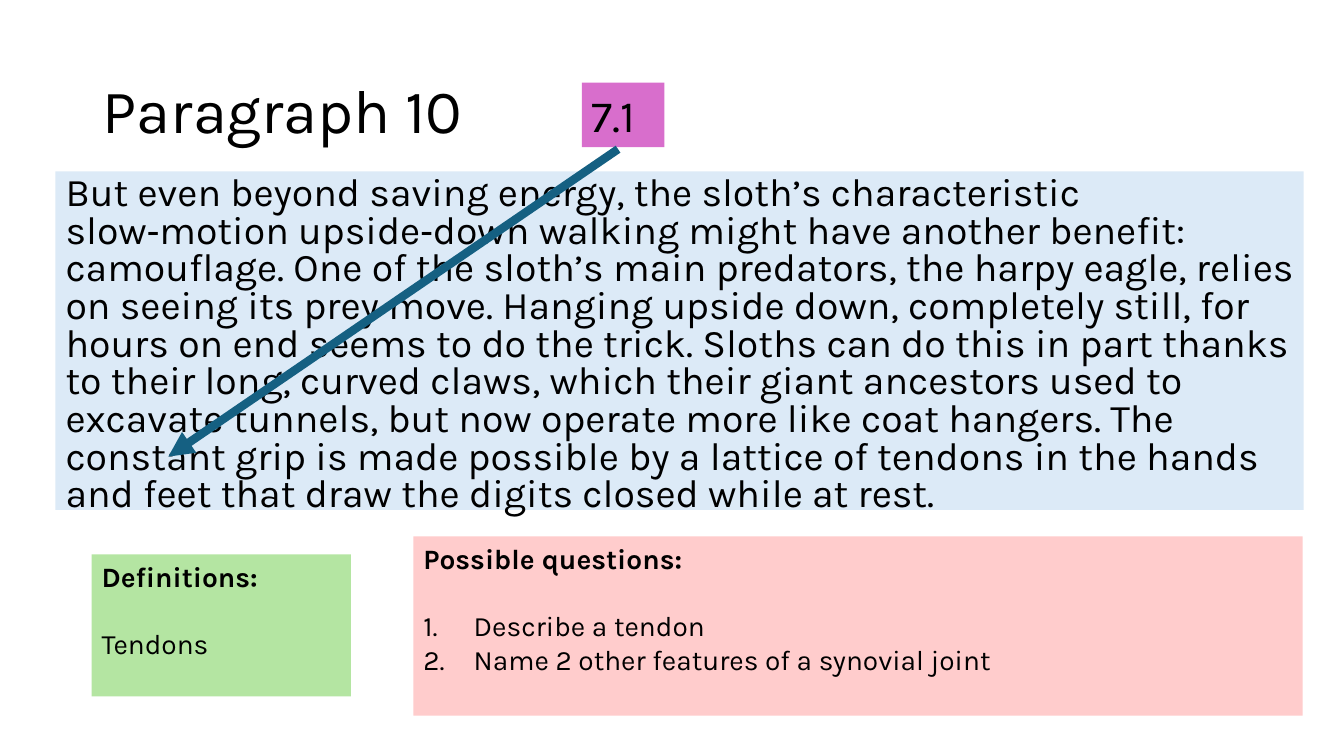
"""Build the reading slide for paragraph 10."""
import pptx
import pptx.dml.color
import pptx.enum.shapes
import pptx.enum.text
import pptx.oxml
import pptx.oxml.ns
import pptx.util
from pptx.util import Inches

RGBColor = pptx.dml.color.RGBColor
BLACK = RGBColor(0x00, 0x00, 0x00)
PALE_BLUE = RGBColor(0xDC, 0xEA, 0xF7)
GREEN = RGBColor(0xB4, 0xE5, 0xA2)
PINK = RGBColor(0xFF, 0xCC, 0xCC)
MAGENTA = RGBColor(0xD8, 0x6E, 0xCC)
TEAL = RGBColor(0x15, 0x60, 0x82)
FONT = "Karla"

PASSAGE = (
    "But even beyond saving energy, the sloth’s characteristic slow‑motion "
    "upside‑down walking might have another benefit: camouflage. One of the "
    "sloth’s main predators, the harpy eagle, relies on seeing its prey move. "
    "Hanging upside down, completely still, for hours on end seems to do the "
    "trick. Sloths can do this in part thanks to their long, curved claws, "
    "which their giant ancestors used to excavate tunnels, but now operate "
    "more like coat hangers. The constant grip is made possible by a lattice "
    "of tendons in the hands and feet that draw the digits closed while at rest."
)


def add_child(parent, tag, **attributes):
    """Append a DrawingML element to a parent element."""
    child = pptx.oxml.parse_xml(f"<a:{tag} {pptx.oxml.ns.nsdecls('a')}/>")
    for name, value in attributes.items():
        child.set(name, str(value))
    parent.append(child)


def style_paragraph(para, size, bold=False):
    """Give a paragraph the slide's font, left aligned."""
    para.alignment = pptx.enum.text.PP_ALIGN.LEFT
    para.font.name = FONT
    para.font.size = pptx.util.Pt(size)
    para.font.bold = bold
    para.font.color.rgb = BLACK


def prepare_frame(box, anchor):
    """Fix the wrapping, sizing and anchoring of a box's text."""
    frame = box.text_frame
    frame.word_wrap = True
    frame.auto_size = pptx.enum.text.MSO_AUTO_SIZE.NONE
    frame.vertical_anchor = anchor
    return frame


def fill_placeholder(box, place, text, size, spacing, anchor):
    """Move a placeholder and write its single paragraph."""
    box.left, box.top, box.width, box.height = map(Inches, place)
    frame = prepare_frame(box, anchor)
    frame.text = text
    para = frame.paragraphs[0]
    style_paragraph(para, size)
    para.line_spacing = spacing
    return para


def add_panel(slide, place, color, heading, size, bold=False, items=(), numbered=False):
    """Add a filled text box with a heading and optional items below it."""
    box = slide.shapes.add_textbox(*map(Inches, place))
    box.fill.solid()
    box.fill.fore_color.rgb = color
    frame = prepare_frame(box, pptx.enum.text.MSO_ANCHOR.TOP)
    frame.text = heading
    style_paragraph(frame.paragraphs[0], size, bold)
    for index, item in enumerate(items):
        para = frame.add_paragraph()
        para.text = item
        style_paragraph(para, size)
        if index == 0:
            para.space_before = pptx.util.Pt(24)
        if numbered:
            properties = para._p.get_or_add_pPr()
            properties.set("marL", str(Inches(0.5)))
            properties.set("indent", str(Inches(-0.5)))
            add_child(properties, "buFont", typeface="+mj-lt")
            add_child(properties, "buAutoNum", type="arabicPeriod")


def add_arrow(slide, start, end, color, weight):
    """Draw a straight arrow from start to end."""
    arrow = slide.shapes.add_connector(
        pptx.enum.shapes.MSO_CONNECTOR.STRAIGHT, *map(Inches, start + end)
    )
    arrow.line.color.rgb = color
    arrow.line.width = pptx.util.Pt(weight)
    add_child(arrow.line._get_or_add_ln(), "tailEnd", type="triangle")
    add_child(arrow._element.spPr, "effectLst")


def main():
    """Build and save the slide."""
    deck = pptx.Presentation()
    deck.slide_width, deck.slide_height = Inches(13.33), Inches(7.5)
    slide = deck.slides.add_slide(deck.slide_layouts[1])
    title, body = slide.placeholders

    fill_placeholder(title, (0.92, 0.4, 11.5, 1.45), "Paragraph 10", 44, 0.9,
                     pptx.enum.text.MSO_ANCHOR.MIDDLE)
    passage = fill_placeholder(body, (0.55, 1.7, 12.38, 3.36), PASSAGE, 28, 0.8,
                               pptx.enum.text.MSO_ANCHOR.TOP)
    passage.space_before = pptx.util.Pt(10)
    properties = passage._p.get_or_add_pPr()
    properties.set("marL", "0")
    properties.set("indent", "0")
    add_child(properties, "buNone")
    properties.append(properties.find(pptx.oxml.ns.qn("a:defRPr")))
    body.fill.solid()
    body.fill.fore_color.rgb = PALE_BLUE

    add_panel(slide, (0.91, 5.5, 2.57, 1.41), GREEN, "Definitions:", 20, True, ["Tendons"])
    add_panel(slide, (5.77, 0.82, 0.82, 0.64), MAGENTA, "7.1", 32)
    add_arrow(slide, (6.13, 1.48), (1.67, 4.53), TEAL, 6)
    add_panel(slide, (4.1, 5.32, 8.82, 1.78), PINK, "Possible questions:", 20, True,
              ["Describe a tendon", "Name 2 other features of a synovial joint"], True)
    deck.save("out.pptx")


if __name__ == "__main__":
    main()
